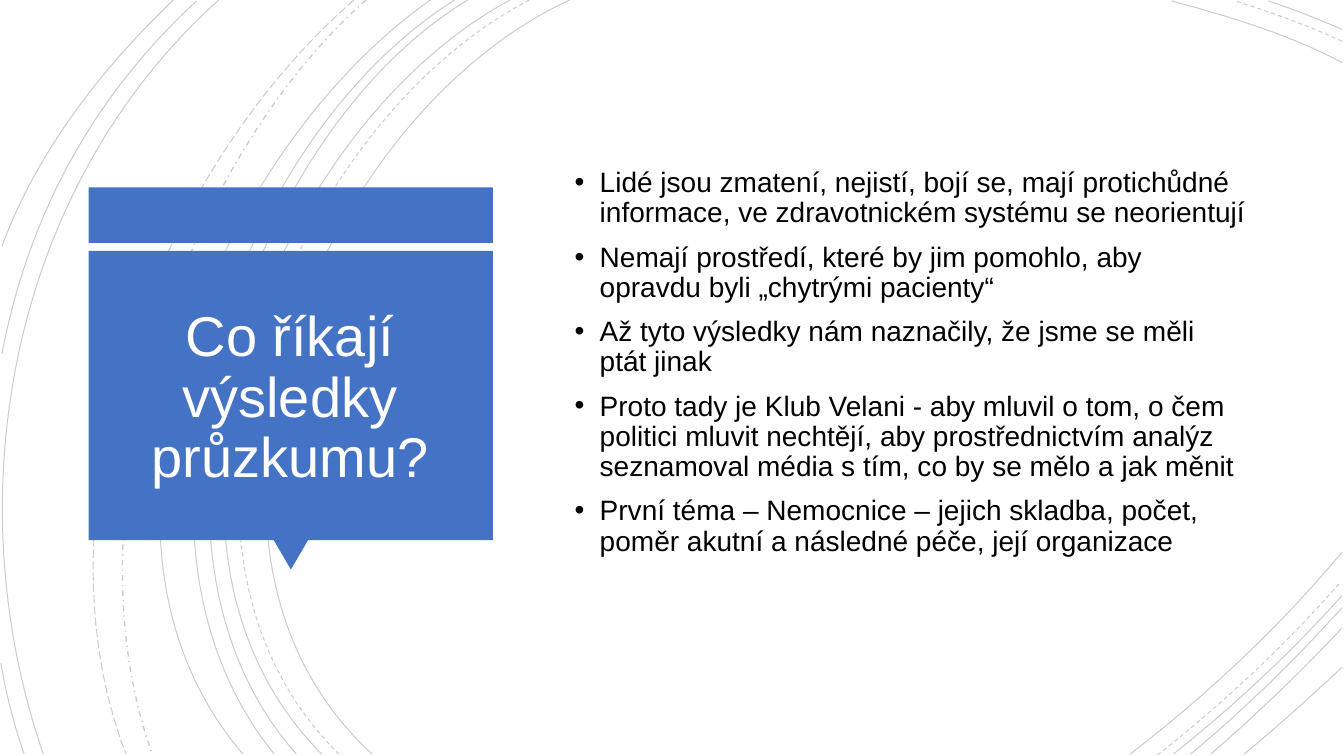
import dataclasses

import lxml.etree
import pptx
import pptx.dml.color
import pptx.enum.dml
import pptx.enum.shapes
import pptx.enum.text
import pptx.oxml.ns
import pptx.util

SHAPE = pptx.enum.shapes.MSO_SHAPE
DASH = pptx.enum.dml.MSO_LINE
ALIGN = pptx.enum.text.PP_ALIGN
ANCHOR = pptx.enum.text.MSO_ANCHOR

COLUMNS, ROWS = 13.33, 7.5
SLIDE_WIDTH, SLIDE_HEIGHT = pptx.util.Inches(13.33), pptx.util.Inches(7.5)


@dataclasses.dataclass(frozen=True)
class Theme:
    font: str = "Arial"
    panel: str = "4472C4"
    title: str = "FFFFFF"
    text: str = "000000"
    arc: str = "000000"
    arc_opacity: int = 20
    title_size: int = 40
    text_size: int = 20
    line_spacing: float = 0.9
    space_before: int = 10


@dataclasses.dataclass(frozen=True)
class Box:
    left: float
    top: float
    width: float
    height: float

    def inner(self, left, top, width, height):
        return Box(self.left + left, self.top + top, width, height)

    def point(self, column, row):
        return (
            round((self.left + column) * SLIDE_WIDTH / COLUMNS),
            round((self.top + row) * SLIDE_HEIGHT / ROWS),
        )

    def frame(self):
        left, top = self.point(0, 0)
        right, bottom = self.point(self.width, self.height)
        return left, top, right - left, bottom - top


THEME = Theme()
PAGE = Box(0, 0, COLUMNS, ROWS)
PANEL = Box(0.88, 1.86, 4.01, 3.8)
POINTS = Box(5.6, 0.88, 6.87, 5.74)

TITLE = "Co říkají výsledky průzkumu?"
FINDINGS = [
    "Lidé jsou zmatení, nejistí, bojí se, mají protichůdné informace, ve zdravotnickém systému se neorientují",
    "Nemají prostředí, které by jim pomohlo, aby opravdu byli „chytrými pacienty“",
    "Až tyto výsledky nám naznačily, že jsme se měli ptát jinak",
    "Proto tady je Klub Velani - aby mluvil o tom, o čem politici mluvit nechtějí, "
    "aby prostřednictvím analýz seznamoval média s tím, co by se mělo a jak měnit",
    "První téma – Nemocnice – jejich skladba, počet, poměr akutní a následné péče, její organizace",
]

ARCS = {
    (DASH.SOLID, 0.75): [
        (5.65, 0, 3.15, 1.15, 1.43, 5.4, 3.69, 7.48),
        (5.06, 0, 2.7, 1.27, 1.1, 5.37, 3.19, 7.48),
        (4.64, 0, 2.44, 1.33, 1.1, 5.41, 2.94, 7.48),
        (4.51, 0, 2.31, 1.38, 0.97, 5.33, 2.72, 7.48),
        (4.27, 0, 2.17, 1.47, 0.53, 5.29, 2.41, 7.48),
        (2.17, 0, 0.11, 1.85, -0.46, 4.9, 0.43, 7.48),
        (1.95, 0.01, 0.92, 0.96, 0.28, 2.14, 0.02, 3.51),
        (1.72, 0, 1, 0.69, 0.37, 1.5, 0.02, 2.44),
        (0.01, 6.58, 0.06, 6.89, 0.14, 7.19, 0.24, 7.48),
        (13.31, 0.62, 12.78, 0.34, 12.18, 0.16, 11.62, 0.01),
        (13.31, 0.29, 13.07, 0.19, 12.83, 0.09, 12.58, 0.01),
        (11.21, 7.48, 11.97, 6.9, 12.69, 6.22, 13.31, 5.48),
        (11.64, 7.48, 12.23, 7.01, 12.8, 6.48, 13.31, 5.91),
        (11.81, 7.48, 12.34, 7.04, 12.84, 6.55, 13.31, 6.03),
        (12.01, 7.48, 12.46, 7.09, 12.9, 6.67, 13.31, 6.23),
        (12.34, 7.48, 12.67, 7.21, 12.99, 6.92, 13.31, 6.62),
    ],
    (DASH.DASH, 0.75): [
        (5.25, 0, 2.85, 1.25, 1.23, 5.37, 3.36, 7.48),
        (13.31, 0.41, 12.97, 0.25, 12.6, 0.12, 12.25, 0.01),
        (11.48, 7.49, 12.13, 6.98, 12.75, 6.4, 13.3, 5.77),
    ],
    (DASH.DASH_DOT, 1): [(3.63, 0, 1.76, 1.66, 0.65, 5.09, 1.51, 7.48)],
    (DASH.LONG_DASH, 0.75): [(3.51, 0, 1.57, 1.69, 0.29, 4.99, 1.25, 7.48)],
}


def color(value):
    return pptx.dml.color.RGBColor.from_string(value)


def add_xml(parent, tag, **attributes):
    return lxml.etree.SubElement(parent, pptx.oxml.ns.qn(tag), attributes)


def bend(shape):
    segments = list(shape._element.iter(pptx.oxml.ns.qn("a:lnTo")))
    outline = segments[0].getparent()
    curve = add_xml(outline, "a:cubicBezTo")
    for segment in segments:
        curve.append(segment[0])
        outline.remove(segment)


def draw_arc(shapes, box, arc, dash, weight):
    start, *rest = [box.point(*point) for point in zip(arc[::2], arc[1::2])]
    builder = shapes.build_freeform(*start)
    builder.add_line_segments(rest, close=False)
    shape = builder.convert_to_shape()
    bend(shape)
    shape.shadow.inherit = False
    shape.fill.background()
    shape.line.color.rgb = color(THEME.arc)
    shape.line.width = pptx.util.Pt(weight)
    shape.line.dash_style = dash
    tone = shape.line._ln.find(".//" + pptx.oxml.ns.qn("a:srgbClr"))
    add_xml(tone, "a:alpha", val=str(THEME.arc_opacity * 1000))


def draw_background(page, box):
    group = page.shapes.add_group_shape()
    for (dash, weight), arcs in ARCS.items():
        for arc in arcs:
            draw_arc(group.shapes, box, arc, dash, weight)


def add_text(page, box, lines, size, tone, alignment):
    text_box = page.shapes.add_textbox(*box.frame())
    frame = text_box.text_frame
    frame.word_wrap = True
    frame.vertical_anchor = ANCHOR.MIDDLE
    frame.text = "\n".join(lines)
    for para in frame.paragraphs:
        para.alignment = alignment
        para.line_spacing = THEME.line_spacing
        para.font.name = THEME.font
        para.font.size = pptx.util.Pt(size)
        para.font.color.rgb = color(tone)
    return frame


def draw_title_panel(page, box):
    group = page.shapes.add_group_shape()
    pointer_width = 0.35
    parts = [
        (SHAPE.RECTANGLE, box.inner(0, 0, box.width, 0.55), 0),
        (
            SHAPE.ISOSCELES_TRIANGLE,
            box.inner((box.width - pointer_width) / 2, 3.49, pointer_width, 0.3),
            180,
        ),
        (SHAPE.RECTANGLE, box.inner(0, 0.63, box.width, 2.87), 0),
    ]
    for kind, place, rotation in parts:
        shape = group.shapes.add_shape(kind, *place.frame())
        shape.rotation = rotation
        shape.shadow.inherit = False
        shape.fill.solid()
        shape.fill.fore_color.rgb = color(THEME.panel)
        shape.line.fill.background()
    title_box = box.inner(0.11, 0.79, 3.77, 2.62)
    add_text(page, title_box, [TITLE], THEME.title_size, THEME.title, ALIGN.CENTER)


def draw_findings(page, box):
    frame = add_text(page, box, FINDINGS, THEME.text_size, THEME.text, ALIGN.LEFT)
    frame.margin_bottom = pptx.util.Inches(0.35)
    indent = pptx.util.Inches(0.25)
    for para in frame.paragraphs:
        para.space_before = pptx.util.Pt(THEME.space_before)
        properties = para._p.get_or_add_pPr()
        properties.set("marL", str(indent))
        properties.set("indent", str(-indent))
        defaults = properties.find(pptx.oxml.ns.qn("a:defRPr"))
        defaults.addprevious(add_xml(properties, "a:buFont", typeface=THEME.font))
        defaults.addprevious(add_xml(properties, "a:buChar", char="•"))


def main():
    deck = pptx.Presentation()
    deck.slide_width, deck.slide_height = SLIDE_WIDTH, SLIDE_HEIGHT
    page = deck.slides.add_slide(deck.slide_layouts[6])
    draw_background(page, PAGE)
    draw_title_panel(page, PANEL)
    draw_findings(page, POINTS)
    deck.save("out.pptx")


if __name__ == "__main__":
    main()
